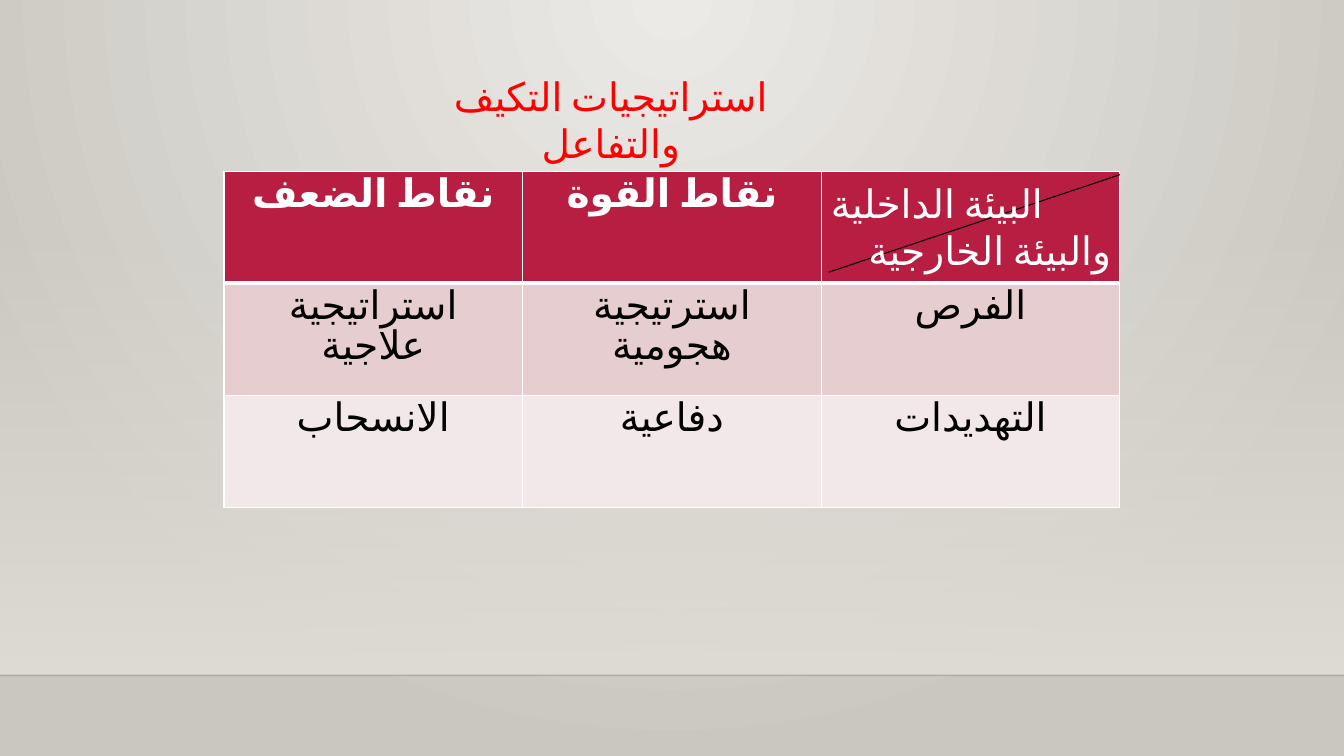
from pptx import Presentation
from pptx import util as u
from pptx.dml.color import RGBColor
from pptx.enum import lang, shapes, text
from pptx.oxml import parse_xml
from pptx.oxml.ns import nsdecls, qn
from pptx.oxml.xmlchemy import OxmlElement

UNIT = 10 / 9  # side of a square grid cell in inches: 12 columns, 6.75 rows
ALIGN = {"l": text.PP_ALIGN.LEFT, "c": text.PP_ALIGN.CENTER,
         "r": text.PP_ALIGN.RIGHT}


def grid(*cells):
    return [u.Inches(n * UNIT) for n in cells]


def rgb(code):
    return RGBColor.from_string(code)


def fade(old, stops, shade):
    """Swap a solid fill for a gradient of (place, colour, opacity) stops."""
    marks = "".join(
        f'<a:gs pos="{at * 1000}"><a:srgbClr val="{code}">'
        f'<a:alpha val="{full * 1000}"/></a:srgbClr></a:gs>'
        for at, code, full in stops)
    new = parse_xml(f'<a:gradFill {nsdecls("a")} rotWithShape="1">'
                    f'<a:gsLst>{marks}</a:gsLst>{shade}</a:gradFill>')
    old.getparent().replace(old, new)


def write(para, words, size=28, color="FFFFFF", bold=False, align="c",
          lead=None):
    para.alignment = ALIGN[align]
    if lead:
        para.line_spacing = lead
    run = para.add_run()
    run.text = words
    font = run.font
    font.name, font.size, font.bold = Deck.face, u.Pt(size), bold
    font.language_id = lang.MSO_LANGUAGE_ID.ARABIC
    font.color.rgb = rgb(color)
    script = OxmlElement("a:cs")
    script.set("typeface", Deck.face)
    run._r.get_or_add_rPr().append(script)


class Deck:
    face = "Cabin"
    head = "B71E42"
    bands = ["E6CDCF", "F3E8E9"]

    def __init__(self):
        self.prs = Presentation()
        self.prs.slide_width, self.prs.slide_height = grid(12, 6.75)
        self.slide = self.prs.slides.add_slide(self.prs.slide_layouts[6])
        self.items = self.slide.shapes

    def back(self, inner, outer):
        fill = self.slide.background.fill
        fill.solid()
        fill.fore_color.rgb = rgb(inner)
        solid = self.slide.element.find(".//" + qn("p:bgPr")).find(
            qn("a:solidFill"))
        fade(solid, [(0, inner, 100), (100, outer, 100)],
             '<a:path path="circle"><a:fillToRect l="43000" t="0" '
             'r="43000" b="100000"/></a:path>')

    def veil(self, x, y, w, h, color):
        box = self.items.add_shape(shapes.MSO_SHAPE.RECTANGLE,
                                   *grid(x, y, w, h))
        box.shadow.inherit = False
        box.line.fill.background()
        box.fill.solid()
        box.fill.fore_color.rgb = rgb(color)
        fade(box._element.spPr.find(qn("a:solidFill")),
             [(0, color, 0), (100, color, 100)],
             '<a:lin ang="5400000" scaled="0"/>')

    def line(self, x1, y1, x2, y2, color="000000", width=0.75, full=100):
        rule = self.items.add_connector(shapes.MSO_CONNECTOR.STRAIGHT,
                                        *grid(x1, y1, x2, y2))
        rule.line.width = u.Pt(width)
        rule.line.color.rgb = rgb(color)
        props = rule._element.spPr
        if full < 100:
            alpha = OxmlElement("a:alpha")
            alpha.set("val", str(full * 1000))
            props.find(".//" + qn("a:srgbClr")).append(alpha)
        props.append(OxmlElement("a:effectLst"))

    def label(self, x, y, w, h, rows, **style):
        frame = self.items.add_textbox(*grid(x, y, w, h)).text_frame
        frame.word_wrap = True
        for i, (words, align) in enumerate(rows):
            para = frame.add_paragraph() if i else frame.paragraphs[0]
            write(para, words, align=align, **style)

    def edge(self, cell, sides):
        props = cell._tc.get_or_add_tcPr()
        for i, (side, width) in enumerate(sides.items()):
            props.insert(i, parse_xml(
                f'<a:ln{side} {nsdecls("a")} w="{u.Pt(width)}"><a:solidFill>'
                f'<a:srgbClr val="FFFFFF"/></a:solidFill></a:ln{side}>'))

    def table(self, x, y, w, h, rows):
        table = self.items.add_table(len(rows), len(rows[0]),
                                     *grid(x, y, w, h)).table
        for r, row in enumerate(rows):
            for c, words in enumerate(row):
                cell = table.cell(r, c)
                cell.fill.solid()
                cell.fill.fore_color.rgb = rgb(
                    self.bands[(r - 1) % 2] if r else self.head)
                self.edge(cell, {"L": 1, "R": 1, "T": 3 if r == 1 else 1,
                                 "B": 1 if r else 3})
                if words:
                    write(cell.text_frame.paragraphs[0], words, bold=r == 0,
                          color="000000" if r else "FFFFFF", lead=0.83)


def main():
    deck = Deck()

    # Backdrop: glow, wall and floor line
    floor = 6.03
    deck.back("ECEAE7", "CAC7C1")
    deck.veil(0, 1.99, 12, floor - 1.99, "DFDBD5")
    deck.line(0, floor, 12, floor, color="000001", width=1, full=20)

    # Strategy matrix
    deck.table(2, 1.53, 8, 3, [
        ["نقاط الضعف", "نقاط القوة", ""],
        ["استراتيجية علاجية", "استرتيجية هجومية", "الفرص"],
        ["الانسحاب", "دفاعية", "التهديدات"],
    ])

    # Split corner cell
    deck.line(10, 1.56, 7.4, 2.43)
    deck.label(7.33, 1.56, 2.68, 0.94,
               [("البيئة الداخلية", "l"), ("والبيئة الخارجية", "r")])

    # Title
    deck.label(3.33, 0.6, 4.25, 0.51,
               [("استراتيجيات التكيف والتفاعل", "c")], color="FF0000")

    deck.prs.save("out.pptx")


if __name__ == "__main__":
    main()
